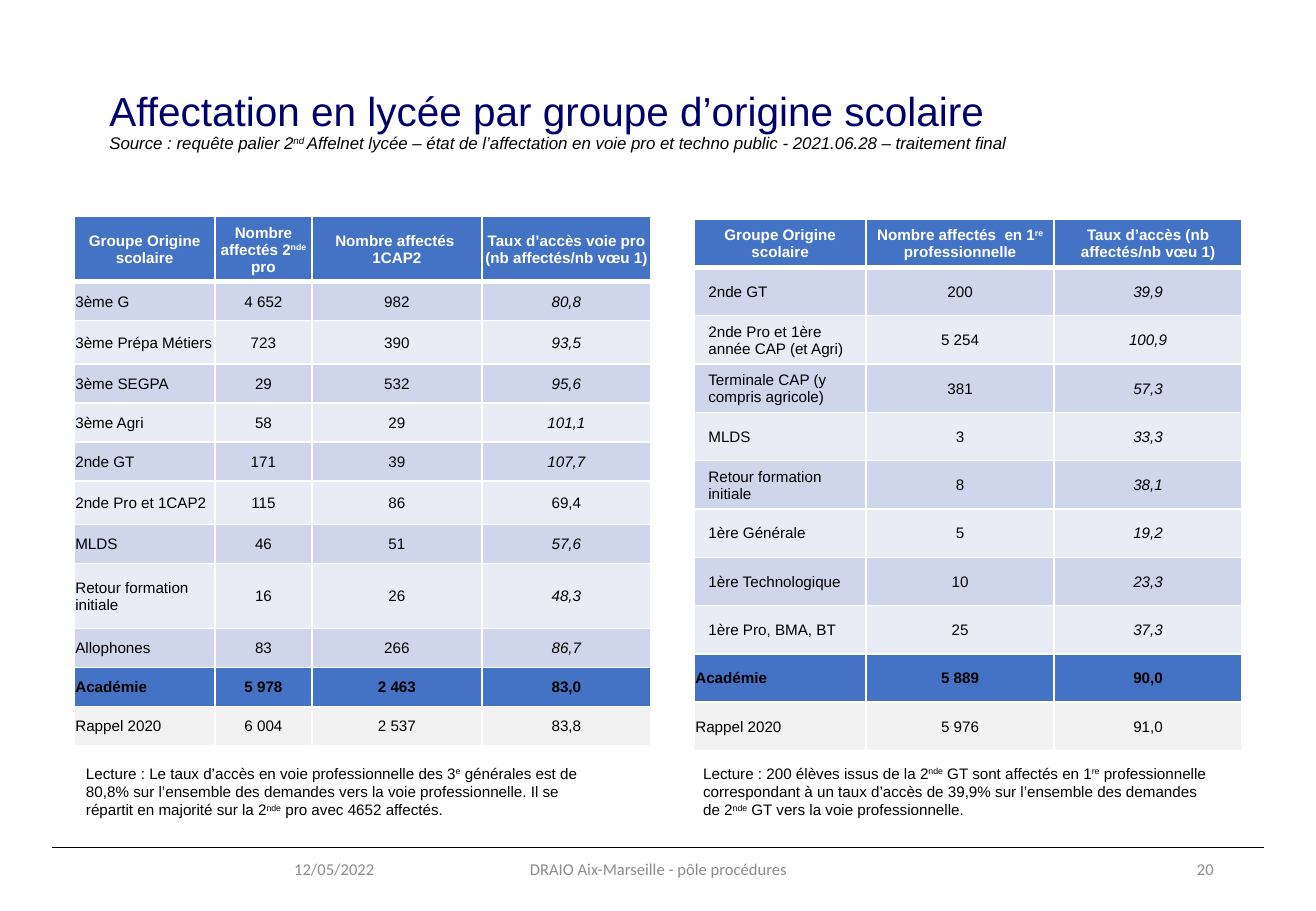
"""Build the slide on lycée placement by school origin group."""
from lxml.etree import SubElement
from pptx import Presentation
from pptx.dml.color import RGBColor
from pptx.enum.shapes import MSO_CONNECTOR
from pptx.enum.text import MSO_ANCHOR, MSO_AUTO_SIZE, PP_ALIGN
from pptx.oxml.ns import qn
from pptx.util import Pt

HEADING = "Affectation en lycée par groupe d’origine scolaire"
SOURCE = ("Source : requête palier 2^nd ^Affelnet lycée – état de l’affectation "
          "en voie pro et techno public - 2021.06.28 – traitement final")

THIRD_YEAR = {
    "place": (43.9, 128.4),
    "widths": (83.5, 57.5, 100.7, 100.3),
    "heights": (38.6, 23.1, 25.8, 23.1, 23.1, 23.1, 25.8, 23.1, 38.6, 23.1, 23.1, 23.1),
    "label_indent": 0.75,
    "upright": {"69,4"},
    "rows": [
        ("Groupe Origine scolaire", "Nombre affectés 2^nde^ pro",
         "Nombre affectés  1CAP2", "Taux d’accès voie pro (nb affectés/nb vœu 1)"),
        ("3ème G", "4 652", "982", "80,8"),
        ("3ème Prépa Métiers", "723", "390", "93,5"),
        ("3ème SEGPA", "29", "532", "95,6"),
        ("3ème Agri", "58", "29", "101,1"),
        ("2nde GT", "171", "39", "107,7"),
        ("2nde Pro et 1CAP2", "115", "86", "69,4"),
        ("MLDS", "46", "51", "57,6"),
        ("Retour formation initiale", "16", "26", "48,3"),
        ("Allophones", "83", "266", "86,7"),
        ("Académie", "5 978", "2 463", "83,0"),
        ("Rappel 2020", "6 004", "2 537", "83,8"),
    ],
}
FIRST_PRO = {
    "place": (411.4, 129.9),
    "widths": (102, 111.4, 111.4),
    "heights": (28.65,) * 11,
    "label_indent": 8.5,
    "upright": set(),
    "rows": [
        ("Groupe Origine scolaire", "Nombre affectés  en 1^re^ professionnelle",
         "Taux d’accès (nb affectés/nb vœu 1)"),
        ("2nde GT", "200", "39,9"),
        ("2nde Pro et 1ère année CAP (et Agri)", "5 254", "100,9"),
        ("Terminale CAP (y compris agricole)", "381", "57,3"),
        ("MLDS", "3", "33,3"),
        ("Retour formation initiale", "8", "38,1"),
        ("1ère Générale", "5", "19,2"),
        ("1ère Technologique", "10", "23,3"),
        ("1ère Pro, BMA, BT", "25", "37,3"),
        ("Académie", "5 889", "90,0"),
        ("Rappel 2020", "5 976", "91,0"),
    ],
}
READINGS = [
    ("Lecture : Le taux d’accès en voie professionnelle des 3^e^ générales est de 80,8% "
     "sur l’ensemble des demandes vers la voie professionnelle. Il se répartit en "
     "majorité sur la 2^nde^ pro avec 4652 affectés.", (43.9, 449.3, 321.8, 40.3)),
    ("Lecture : 200 élèves issus de la 2^nde^ GT sont affectés en 1^re^ professionnelle "
     "correspondant à un taux d’accès de 39,9% sur l’ensemble des demandes de 2^nde^ GT "
     "vers la voie professionnelle.", (409.7, 449.3, 316.8, 40.3)),
]
FOOTERS = [
    ("12/05/2022", (53.3, 500.4, 175.7, 28.8), PP_ALIGN.RIGHT),
    ("DRAIO Aix-Marseille - pôle procédures", (258.5, 500.4, 263.5, 28.8), PP_ALIGN.CENTER),
    ("20", (550.8, 500.4, 175.7, 28.8), PP_ALIGN.RIGHT),
]
HEADER_BLUE, WHITE, BLACK = "4472C4", "FFFFFF", "000000"
BANDS = ("E9EBF5", "CFD5EA")
CLOSING_FILLS = {"Académie": HEADER_BLUE, "Rappel 2020": "F2F2F2"}


def rgb(code):
    return RGBColor.from_string(code)


def write(paragraph, text, size, color=BLACK, name="Arial", align=PP_ALIGN.LEFT,
          bold=False, italic=False):
    """Fill a paragraph; stretches between carets are raised."""
    paragraph.alignment = align
    font = paragraph.font
    font.name, font.size, font.bold, font.italic = name, Pt(size), bold, italic
    font.color.rgb = rgb(color)
    for index, part in enumerate(text.split("^")):
        if part:
            run = paragraph.add_run()
            run.text = part
            if index % 2:
                run.font._element.set("baseline", "30000")


def add_text(slide, text, box, size, **style):
    frame = slide.shapes.add_textbox(*map(Pt, box)).text_frame
    frame.word_wrap = True
    write(frame.paragraphs[0], text, size, **style)
    return frame


def add_borders(cell, row):
    for side in "LRTB":
        width = 3 if (side, row) in {("B", 0), ("T", 1)} else 1
        border = SubElement(cell._tc.get_or_add_tcPr(), qn(f"a:ln{side}"), w=str(Pt(width)))
        SubElement(SubElement(border, qn("a:solidFill")), qn("a:srgbClr"), val=WHITE)


def add_rates(slide, content):
    rows, widths, heights = content["rows"], content["widths"], content["heights"]
    table = slide.shapes.add_table(
        len(rows), len(widths), *map(Pt, content["place"]),
        Pt(sum(widths)), Pt(sum(heights))).table
    table.first_row = table.horz_banding = False
    for column, width in zip(table.columns, widths):
        column.width = Pt(width)
    for r, (row, height) in enumerate(zip(rows, heights)):
        table.rows[r].height = Pt(height)
        header, closing = r == 0, row[0] in CLOSING_FILLS
        fill = HEADER_BLUE if header else CLOSING_FILLS.get(row[0], BANDS[r % 2])
        for c, text in enumerate(row):
            cell = table.cell(r, c)
            label = c == 0 and not header
            rate = c == len(row) - 1 and not header and not closing
            cell.vertical_anchor = MSO_ANCHOR.MIDDLE
            cell.margin_left = Pt(content["label_indent"] if label and not closing else 0.75)
            cell.margin_right = cell.margin_top = Pt(0.75)
            cell.margin_bottom = 0
            add_borders(cell, r)
            cell.fill.solid()
            cell.fill.fore_color.rgb = rgb(fill)
            write(cell.text_frame.paragraphs[0], text, 9, WHITE if header else BLACK,
                  align=PP_ALIGN.LEFT if label else PP_ALIGN.CENTER,
                  bold=header or row[0] == "Académie",
                  italic=rate and text not in content["upright"])


def add_heading(slide):
    title = slide.shapes.title
    title.left, title.top, title.width, title.height = map(Pt, (64.8, 54, 638.6, 75.6))
    frame = title.text_frame
    frame.auto_size = MSO_AUTO_SIZE.NONE
    frame.vertical_anchor = MSO_ANCHOR.TOP
    frame.margin_left = frame.margin_right = frame.margin_top = frame.margin_bottom = 0
    write(frame.paragraphs[0], HEADING, 24, "00006D")
    write(frame.add_paragraph(), SOURCE, 10, italic=True)
    for paragraph in frame.paragraphs:
        paragraph.line_spacing = 0.9
        paragraph.space_before = Pt(0)


def main():
    deck = Presentation()
    deck.slide_width, deck.slide_height = Pt(780), Pt(540)
    slide = deck.slides.add_slide(deck.slide_layouts[5])
    add_heading(slide)
    rule = slide.shapes.add_connector(
        MSO_CONNECTOR.STRAIGHT, Pt(31), Pt(502.4), Pt(749.5), Pt(502.4))
    rule.line.color.rgb = rgb(BLACK)
    rule.line.width = Pt(0.8)
    SubElement(rule._element.spPr, qn("a:effectLst"))
    for content in (THIRD_YEAR, FIRST_PRO):
        add_rates(slide, content)
    for text, box in READINGS:
        add_text(slide, text, box, 9)
    for text, box, align in FOOTERS:
        frame = add_text(slide, text, box, 9.8, color="8C8C8C", name="Calibri", align=align)
        frame.vertical_anchor = MSO_ANCHOR.MIDDLE
    deck.save("out.pptx")


if __name__ == "__main__":
    main()
